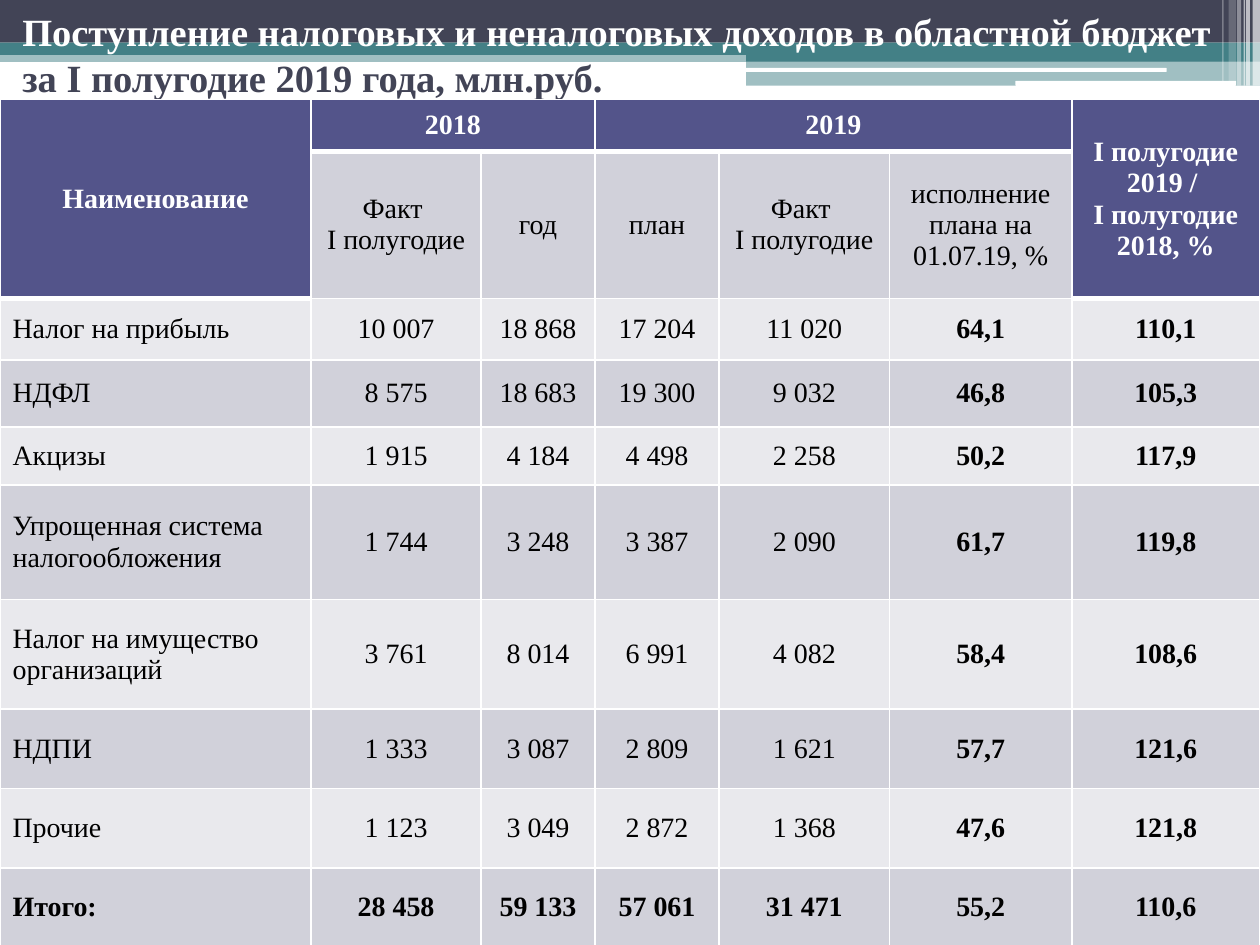
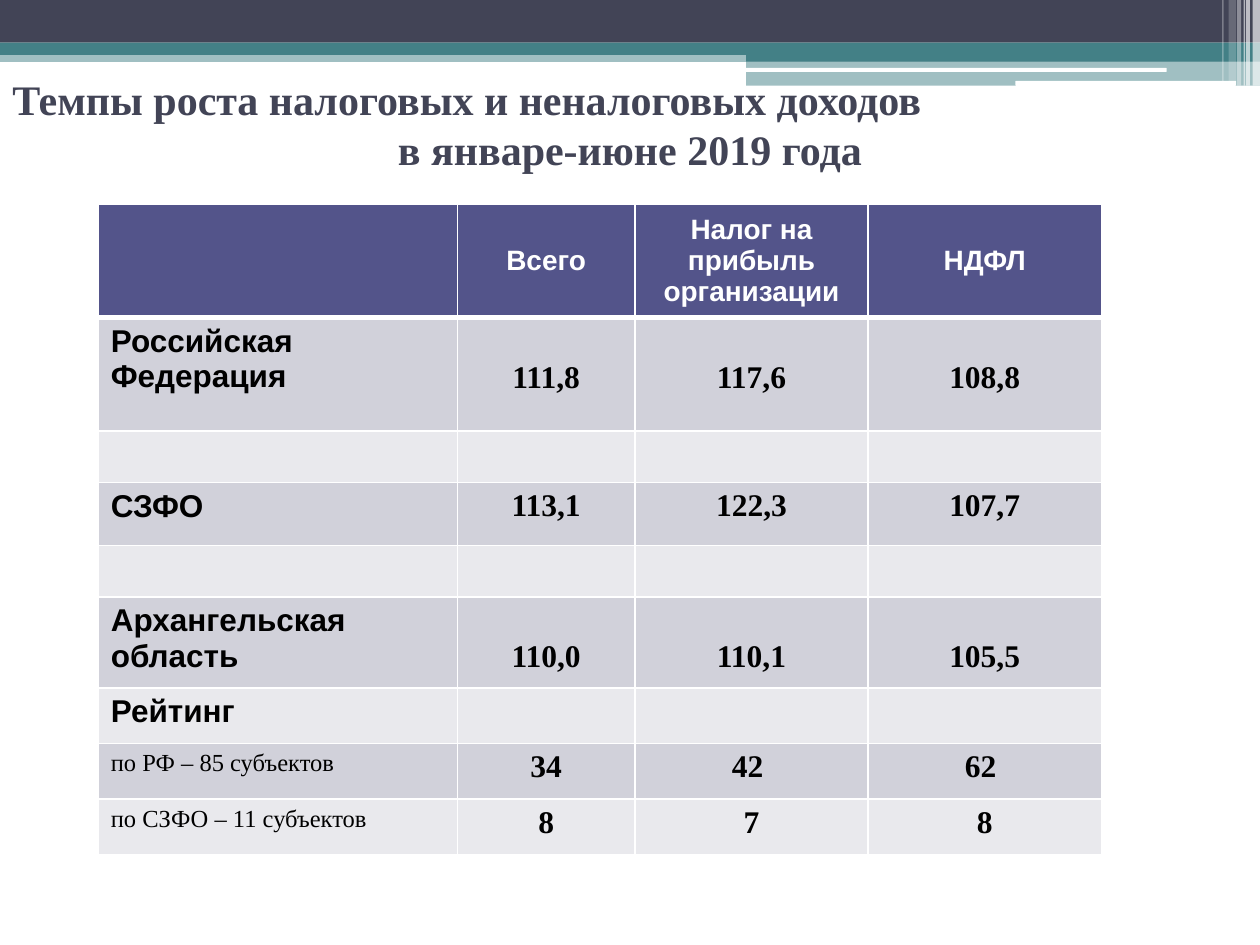
from collections import namedtuple
from dataclasses import dataclass

from lxml.etree import SubElement
from pptx import Presentation
from pptx.dml.color import RGBColor
from pptx.enum.shapes import MSO_SHAPE
from pptx.enum.text import MSO_ANCHOR, PP_ALIGN
from pptx.oxml.ns import qn
from pptx.util import Cm, Pt

Box = namedtuple("Box", "left top width height")


@dataclass(frozen=True)
class Theme:
    dark: str = "424456"
    teal: str = "438086"
    white: str = "FFFFFF"
    black: str = "000000"
    header: str = "53548A"
    row_dark: str = "D1D1DA"
    row_light: str = "E9E9ED"
    serif: str = "Times New Roman"
    sans: str = "Arial"
    title_budget: int = 22
    title_growth: int = 24
    body: int = 16
    large: int = 18
    small: int = 14
    rule: int = 1
    header_rule: int = 3


T = Theme()

BUDGET_COLS = [6.27, 3.43, 2.29, 2.51, 3.43, 3.68, 3.78]
BUDGET_ROWS = [1.04, 2.9, 1.24, 1.35, 1.17, 2.31, 2.21, 1.6, 1.6, 1.6]
BUDGET_HEAD = [
    ["Наименование", "2018", "", "2019", "", "",
     "I полугодие 2019 / \vI полугодие 2018, %"],
    ["", "Факт \nI полугодие", "год", "план", "Факт \nI полугодие",
     "исполнение плана на 01.07.19, %", ""],
]
BUDGET_MERGES = [(0, 0, 1, 0), (0, 1, 0, 2), (0, 3, 0, 5), (0, 6, 1, 6)]
BUDGET_DATA = [
    ["Налог на прибыль", "10 007", "18 868", "17 204", "11 020", "64,1", "110,1"],
    ["НДФЛ", "8 575", "18 683", "19 300", "9 032", "46,8", "105,3"],
    ["Акцизы", "1 915", "4 184", "4 498", "2 258", "50,2", "117,9"],
    ["Упрощенная система налогообложения",
     "1 744", "3 248", "3 387", "2 090", "61,7", "119,8"],
    ["Налог на имущество организаций",
     "3 761", "8 014", "6 991", "4 082", "58,4", "108,6"],
    ["НДПИ", "1 333", "3 087", "2 809", "1 621", "57,7", "121,6"],
    ["Прочие", "1 123", "3 049", "2 872", "1 368", "47,6", "121,8"],
    ["Итого:", "28 458", "59 133", "57 061", "31 471", "55,2", "110,6"],
]

GROWTH_COLS = [7.24, 3.58, 4.7, 4.7]
GROWTH_ROWS = [2.08, 2.29, 1.04, 1.27, 1.04, 1.83, 1.12, 1.12, 1.12]
GROWTH_HEAD = ["", "Всего", "Налог на прибыль организации", "НДФЛ"]
GROWTH_DATA = [
    ["Российская Федерация", "111,8", "117,6", "108,8"],
    [""] * 4,
    ["СЗФО", "113,1", "122,3", "107,7"],
    [""] * 4,
    ["Архангельская область", "110,0", "110,1", "105,5"],
    ["Рейтинг", "", "", ""],
    ["по РФ – 85 субъектов", "34", "42 ", "62 "],
    ["по СЗФО – 11 субъектов", "8", "7", "8"],
]
TWO_LINE_LABELS = ("Российская Федерация", "Архангельская область")


def rgb(color):
    return RGBColor.from_string(color)


def set_all(obj, values):
    for name, value in values.items():
        setattr(obj, name, value)


def write(p, text, color, **font):
    r = p.add_run()
    r.text = text
    set_all(r.font, font)
    r.font.color.rgb = rgb(color)


def add_band(slide, box, color, alpha=100, kind=MSO_SHAPE.RECTANGLE):
    sp = slide.shapes.add_shape(kind, *(Cm(v) for v in box))
    sp.shadow.inherit = False
    sp.fill.solid()
    sp.fill.fore_color.rgb = rgb(color)
    sp.line.fill.background()
    if alpha < 100:
        clr = sp.fill._xPr.find(".//" + qn("a:srgbClr"))
        SubElement(clr, qn("a:alpha")).set("val", str(alpha * 1000))


def add_header_bands(slide, box):
    """Coloured bands across the top, with pale stripes at the right edge."""
    right = box.left + box.width
    half = 10.36
    for x, y, w, h, color, alpha in [
        (box.left, 1.02, box.width, 0.23, T.teal, 50),
        (box.left, 0, box.width, 0.86, T.dark, 100),
        (box.left, 0.86, box.width, 0.25, T.teal, 100),
        (right - half, 0.99, half, 0.25, T.teal, 100),
        (right - half, 1.23, half, 0.5, T.teal, 50),
    ]:
        add_band(slide, Box(x, box.top + y, w, h), color, alpha)
    for inset, y, w, h in [(10.39, 1.37, 8.51, 0.08), (4.93, 1.63, 4.45, 0.1)]:
        add_band(slide, Box(right - inset, box.top + y, w, h), T.white,
                 kind=MSO_SHAPE.ROUNDED_RECTANGLE)
    for inset, w, h, alpha in [
        (0.15, 0.15, box.height, 65), (0.28, 0.08, box.height, 65),
        (0.33, 0.03, box.height, 60), (0.46, 0.08, box.height, 40),
        (0.63, 0.15, box.height - 0.1, 20), (0.76, 0.03, box.height - 0.1, 30),
    ]:
        add_band(slide, Box(right - inset, box.top, w, h), T.white, alpha)


def add_title(slide, box, lines, size, anchor):
    """Write one paragraph for each (text, colour, alignment) in lines."""
    tf = slide.shapes.add_textbox(*(Cm(v) for v in box)).text_frame
    set_all(tf, {"word_wrap": True, "vertical_anchor": anchor,
                 "margin_top": Cm(0.08)})
    for i, (text, color, align) in enumerate(lines):
        p = tf.add_paragraph() if i else tf.paragraphs[0]
        p.alignment = align
        write(p, text, color, size=Pt(size), name=T.serif, bold=True)


def add_grid(slide, box, cols, rows):
    table = slide.shapes.add_table(
        len(rows), len(cols), *(Cm(v) for v in box)).table
    set_all(table, {"first_row": False, "horz_banding": False})
    for col, width in zip(table.columns, cols):
        col.width = Cm(width)
    for row, height in zip(table.rows, rows):
        row.height = Cm(height)
    return table


def add_borders(cell, widths):
    tcPr = cell._tc.get_or_add_tcPr()
    for i, (side, width) in enumerate(widths.items()):
        ln = SubElement(tcPr, qn("a:ln" + side), w=str(Pt(width)))
        fill = SubElement(ln, qn("a:solidFill"))
        SubElement(fill, qn("a:srgbClr"), val=T.white)
        tcPr.remove(ln)
        tcPr.insert(i, ln)


def style_cell(cell, text, fill, centered=True, margins=None, anchor=None,
               size=T.body, name=T.serif, bold=False):
    is_header = fill == T.header
    cell.fill.solid()
    cell.fill.fore_color.rgb = rgb(fill)
    add_borders(cell, {"L": T.rule, "R": T.rule,
                       "B": T.header_rule if is_header else T.rule})
    cell.vertical_anchor = anchor
    set_all(cell, margins or {})
    if not text:
        return
    tf = cell.text_frame
    for i, line in enumerate(text.split("\n")):
        p = tf.add_paragraph() if i else tf.paragraphs[0]
        p.alignment = PP_ALIGN.CENTER if centered else PP_ALIGN.LEFT
        for j, part in enumerate(line.split("\v")):
            if j:
                p.add_line_break()
            write(p, part, T.white if is_header else T.black,
                  size=Pt(size), name=name, bold=bold)


def add_budget_table(slide, box):
    table = add_grid(slide, box, BUDGET_COLS, BUDGET_ROWS)
    last = len(BUDGET_COLS) - 1
    for r, texts in enumerate(BUDGET_HEAD):
        for c, text in enumerate(texts):
            is_header = r == 0 or c in (0, last)
            style_cell(table.cell(r, c), text,
                       T.header if is_header else T.row_dark,
                       anchor=MSO_ANCHOR.MIDDLE, bold=is_header)
    no_margins = {"margin_" + side: 0
                  for side in ("left", "top", "right", "bottom")}
    for r, texts in enumerate(BUDGET_DATA, len(BUDGET_HEAD)):
        for c, text in enumerate(texts):
            style_cell(table.cell(r, c), text,
                       T.row_dark if r % 2 else T.row_light,
                       centered=c > 0, margins=no_margins if c else None,
                       anchor=MSO_ANCHOR.MIDDLE,
                       bold=c >= last - 1 or texts[0] == "Итого:")
    for r1, c1, r2, c2 in BUDGET_MERGES:
        table.cell(r1, c1).merge(table.cell(r2, c2))


def add_growth_table(slide, box):
    table = add_grid(slide, box, GROWTH_COLS, GROWTH_ROWS)
    for c, text in enumerate(GROWTH_HEAD):
        style_cell(table.cell(0, c), text, T.header, name=T.sans, bold=True,
                   anchor=MSO_ANCHOR.MIDDLE)
    for r, texts in enumerate(GROWTH_DATA, 1):
        for c, text in enumerate(texts):
            is_note = c == 0 and text.startswith("по ")
            is_label = c == 0 and not is_note
            second_line = c > 0 and texts[0] in TWO_LINE_LABELS
            style_cell(table.cell(r, c), text,
                       T.row_dark if r % 2 else T.row_light,
                       centered=c > 0,
                       margins={"margin_top": Cm(0.86)} if second_line else None,
                       size=T.small if is_note else T.large,
                       name=T.sans if is_label else T.serif,
                       bold=not is_note)


def new_slide(prs):
    slide = prs.slides.add_slide(prs.slide_layouts[6])
    add_header_bands(slide, Box(0, 0, 25.4, 1.73))
    return slide


def build_budget_slide(prs):
    slide = new_slide(prs)
    add_title(slide, Box(0.2, 0.08, 25.4, 2.72), [
        ("Поступление налоговых и неналоговых доходов в областной бюджет",
         T.white, PP_ALIGN.LEFT),
        ("за I полугодие 2019 года, млн.руб.", T.dark, PP_ALIGN.LEFT),
    ], T.title_budget, MSO_ANCHOR.TOP)
    add_budget_table(slide, Box(0, 2.01, 25.4, 17.04))


def build_growth_slide(prs):
    slide = new_slide(prs)
    add_title(slide, Box(0, 1.32, 25.4, 2.39), [
        ("Темпы роста налоговых и неналоговых доходов", T.dark, PP_ALIGN.LEFT),
        ("в январе-июне 2019 года", T.dark, PP_ALIGN.CENTER),
    ], T.title_growth, MSO_ANCHOR.MIDDLE)
    add_growth_table(slide, Box(1.98, 4.11, 20.24, 13.08))


def main():
    prs = Presentation()
    set_all(prs, {"slide_width": Cm(25.4), "slide_height": Cm(19.05)})
    build_budget_slide(prs)
    build_growth_slide(prs)
    prs.save("out.pptx")


if __name__ == "__main__":
    main()
